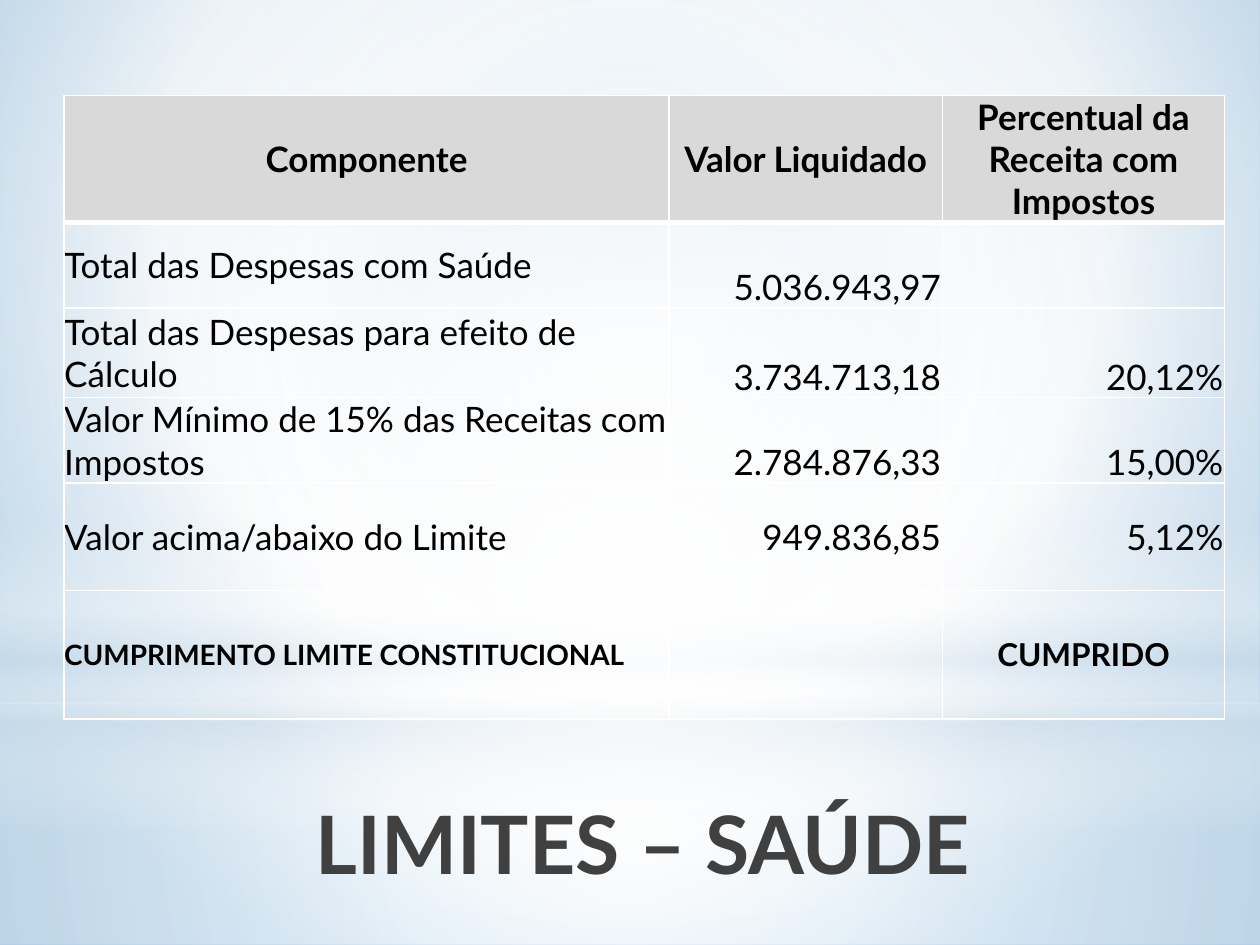
from lxml import etree
from pptx import Presentation
from pptx.dml.color import RGBColor
from pptx.enum.shapes import MSO_SHAPE
from pptx.enum.text import MSO_ANCHOR, MSO_AUTO_SIZE, PP_ALIGN
from pptx.oxml.ns import qn
from pptx.util import Inches, Pt

RECTANGLE, OVAL = MSO_SHAPE.RECTANGLE, MSO_SHAPE.OVAL
TOP, MIDDLE, BOTTOM = MSO_ANCHOR.TOP, MSO_ANCHOR.MIDDLE, MSO_ANCHOR.BOTTOM
LEFT, CENTER, RIGHT = PP_ALIGN.LEFT, PP_ALIGN.CENTER, PP_ALIGN.RIGHT
NO_FIT = MSO_AUTO_SIZE.NONE

WHITE = RGBColor(0xFF, 0xFF, 0xFF)
BLACK = RGBColor(0, 0, 0)
CHARCOAL = RGBColor(0x40, 0x40, 0x40)
GREY = RGBColor(0xD9, 0xD9, 0xD9)
MIST = RGBColor(0xCC, 0xDD, 0xEA)
PALE_BLUE = RGBColor(0xBC, 0xD5, 0xE8)
SKY = RGBColor(0x82, 0xB6, 0xDE)
FONT = "Lato"

CENTRE = (50, 50, 50, 50)
LAYERS = [
    (RECTANGLE, (0, 5.58, 10, 1.92),
     [(0, WHITE, 91), (37, WHITE, 76), (100, MIST, 79)], CENTRE),
    (RECTANGLE, (0, 0, 10, 5.58),
     [(0, WHITE, 89), (48, WHITE, 62), (100, MIST, 79)], CENTRE),
    (RECTANGLE, (0, 4.12, 10, 2.5),
     [(0, WHITE, 0), (29, WHITE, 30), (45, MIST, 40), (55, WHITE, 26),
      (65, MIST, 60), (100, WHITE, 0)], None),
    (OVAL, (0, 1.75, 10, 5.58), [(0, WHITE, 100), (56, WHITE, 0)], CENTRE),
]

COLUMNS = [4.8, 2.17, 2.24]
ROWS = [0.91, 0.68, 0.71, 0.68, 0.85, 1.02]
CELLS = [
    ("Componente", "Valor Liquidado", "Percentual da Receita com Impostos"),
    ("Total das Despesas com Saúde", "5.036.943,97", ""),
    ("Total das Despesas para efeito de Cálculo", "3.734.713,18", "20,12%"),
    ("Valor Mínimo de 15% das Receitas com Impostos", "2.784.876,33", "15,00%"),
    ("Valor acima/abaixo do Limite", "949.836,85", "5,12%"),
    ("CUMPRIMENTO LIMITE CONSTITUCIONAL", "", "CUMPRIDO"),
]
HEADER, LIMIT_ROW, RESULT_ROW = 0, 4, 5


def apply(target, values):
    for name, value in values.items():
        setattr(target, name, value)


def add_colour(parent, colour, opacity=100):
    node = etree.SubElement(parent, qn("a:srgbClr"), val=str(colour))
    if opacity < 100:
        etree.SubElement(node, qn("a:alpha"), val=str(opacity * 1000))


def set_gradient(fill, owner, stops, focus):
    fill.gradient()
    gradient = next(owner.iter(qn("a:gradFill")))
    for child in list(gradient):
        gradient.remove(child)
    stop_list = etree.SubElement(gradient, qn("a:gsLst"))
    for position, colour, opacity in stops:
        stop = etree.SubElement(stop_list, qn("a:gs"), pos=str(position * 1000))
        add_colour(stop, colour, opacity)
    if focus:
        radial = etree.SubElement(gradient, qn("a:path"), {"path": "circle"})
        edges = {side: str(value * 1000) for side, value in zip("ltrb", focus)}
        etree.SubElement(radial, qn("a:fillToRect"), edges)
    else:
        etree.SubElement(gradient, qn("a:lin"), ang="5400000", scaled="0")


def add_backdrop(page):
    stops = [(0, PALE_BLUE, 100), (60, WHITE, 100), (100, SKY, 100)]
    set_gradient(page.background.fill, page.element, stops, (20, 10, 20, 60))
    for kind, box, layer_stops, focus in LAYERS:
        shape = page.shapes.add_shape(kind, *map(Inches, box))
        shape.shadow.inherit = False
        shape.line.fill.background()
        set_gradient(shape.fill, shape.element, layer_stops, focus)


def format_text(frame, align, size, bold, colour):
    para = frame.paragraphs[0]
    para.alignment = align
    for span in para.runs:
        apply(span.font, {"name": FONT, "size": Pt(size), "bold": bold})
        span.font.color.rgb = colour


def place_title(page, box):
    title = page.shapes.title
    title.element.getparent().append(title.element)
    apply(title, dict(zip(("left", "top", "width", "height"), map(Inches, box))))
    frame = title.text_frame
    frame.text = "LIMITES – SAÚDE"
    apply(frame, {"vertical_anchor": TOP, "word_wrap": True, "auto_size": NO_FIT})
    format_text(frame, CENTER, 46, True, CHARCOAL)


def set_borders(cell, bottom):
    properties = cell._tc.get_or_add_tcPr()
    widths = {"a:lnL": 1, "a:lnR": 1, "a:lnT": 1, "a:lnB": bottom}
    for index, (tag, width) in enumerate(widths.items()):
        line = etree.Element(qn(tag), w=str(Pt(width)))
        add_colour(etree.SubElement(line, qn("a:solidFill")), WHITE)
        properties.insert(index, line)


def fill_cell(cell, row, column, text):
    is_header = row == HEADER
    is_number = column > 0 and HEADER < row < RESULT_ROW
    inset = Inches(0.01 if is_number else 0)
    apply(cell, {
        "text": text, "margin_left": inset, "margin_right": inset,
        "margin_top": inset, "margin_bottom": 0,
        "vertical_anchor": BOTTOM if is_number and row < LIMIT_ROW else MIDDLE,
    })
    if is_header:
        cell.fill.solid()
        cell.fill.fore_color.rgb = GREY
    else:
        cell.fill.background()
    align = RIGHT if is_number else CENTER if is_header or column else LEFT
    size = (16 if column == 0 else 18) if row == RESULT_ROW else 20
    format_text(cell.text_frame, align, size, row in (HEADER, RESULT_ROW), BLACK)
    set_borders(cell, 3 if row in (HEADER,) else 1)


def add_limits_table(page, box):
    table = page.shapes.add_table(len(ROWS), len(COLUMNS), *map(Inches, box)).table
    apply(table, {"first_row": False, "horz_banding": False})
    for column, width in zip(table.columns, COLUMNS):
        column.width = Inches(width)
    for row, height in zip(table.rows, ROWS):
        row.height = Inches(height)
    for row, texts in enumerate(CELLS):
        for column, text in enumerate(texts):
            fill_cell(table.cell(row, column), row, column, text)


def main():
    deck = Presentation()
    apply(deck, {"slide_width": Inches(10), "slide_height": Inches(7.5)})
    page = deck.slides.add_slide(deck.slide_layouts[5])
    add_backdrop(page)
    place_title(page, (1.54, 6.25, 7.12, 1.25))
    add_limits_table(page, (0.51, 0.76, sum(COLUMNS), sum(ROWS)))
    deck.save("out.pptx")


if __name__ == "__main__":
    main()
